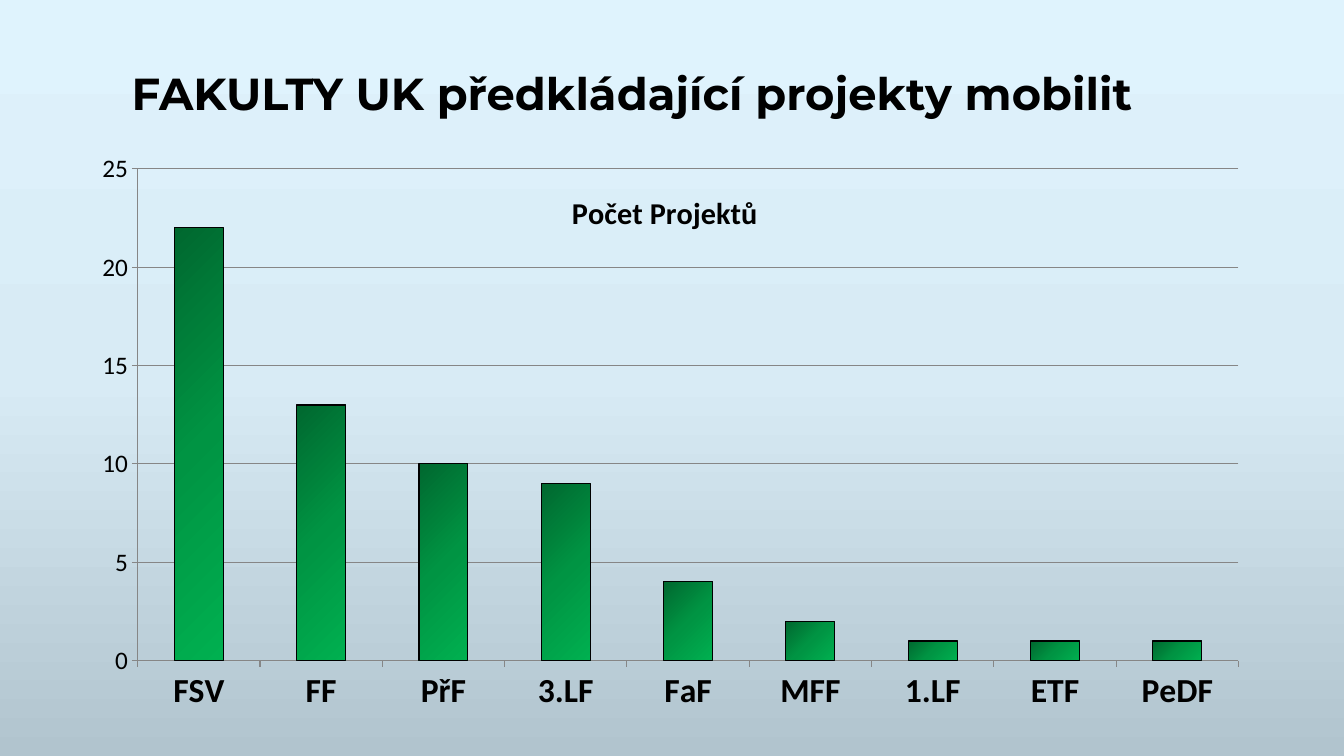
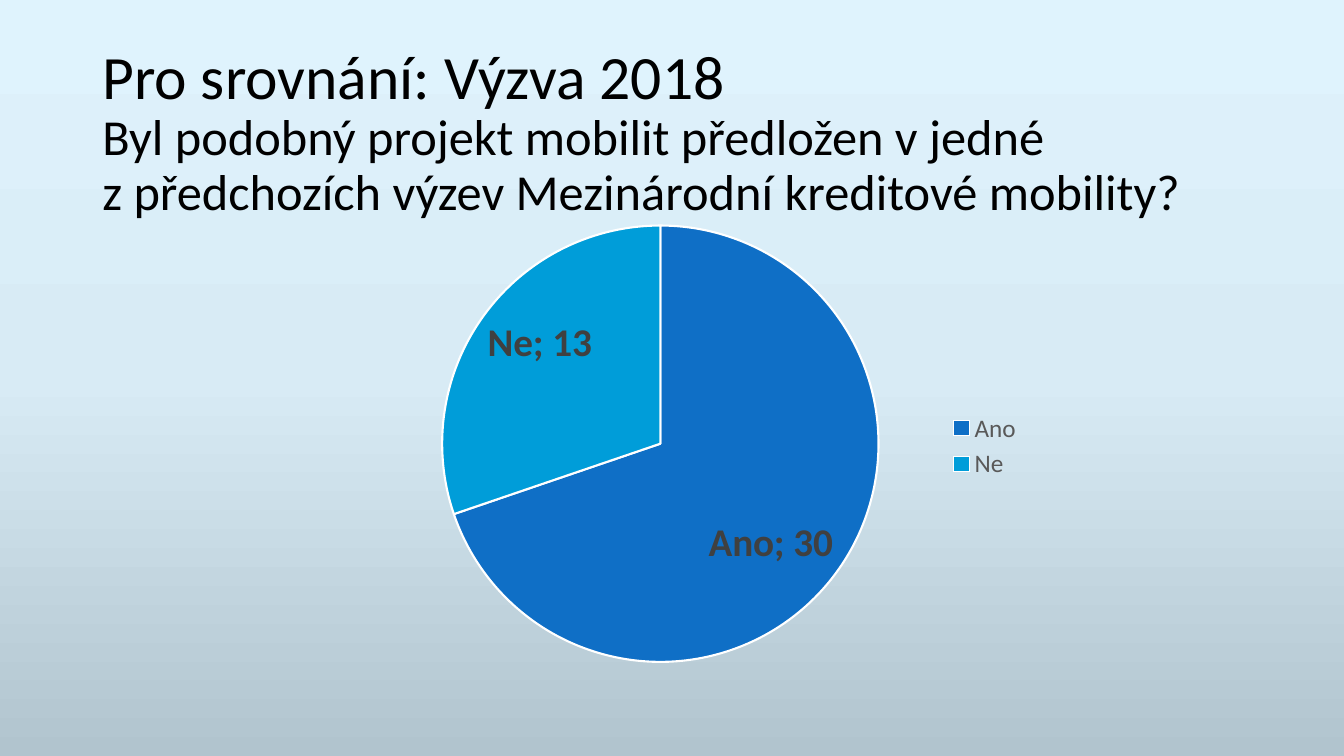
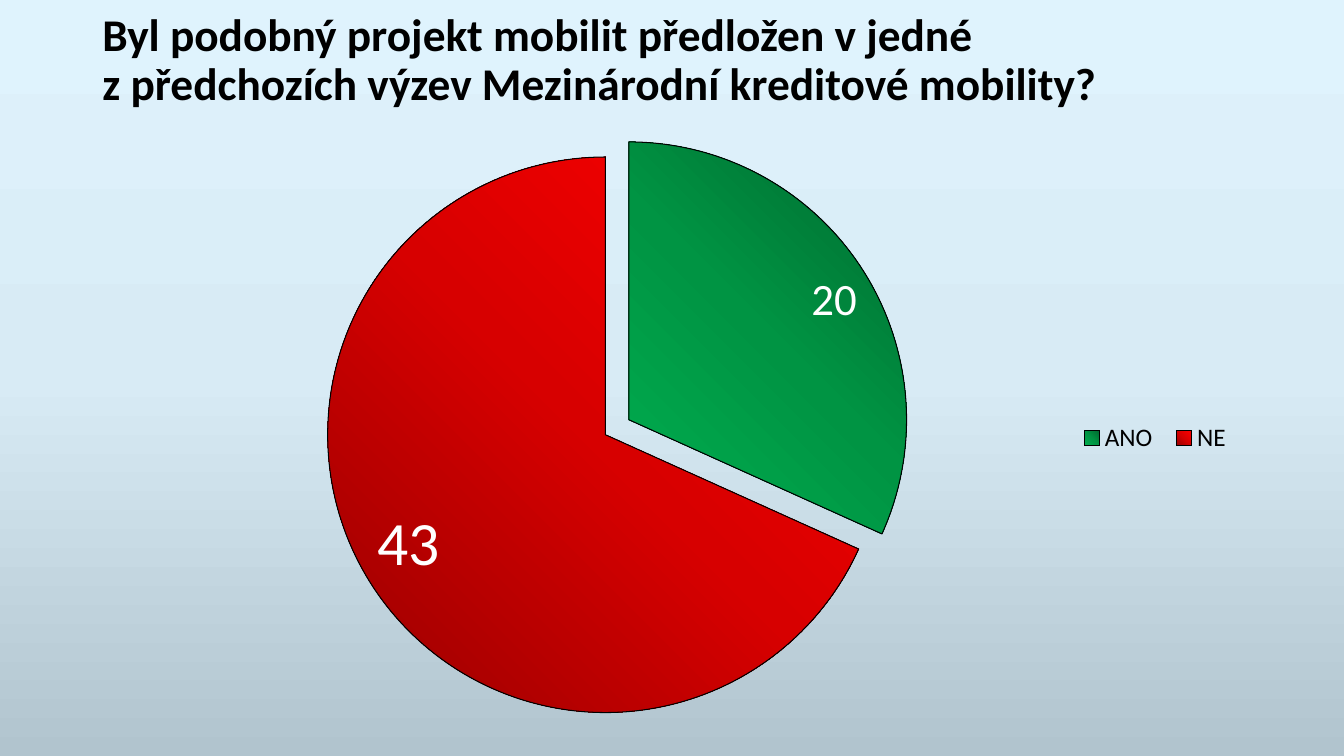
from copy import deepcopy
from lxml import etree
from pptx import Presentation
from pptx.chart.data import CategoryChartData
from pptx.dml.color import RGBColor
from pptx.enum.chart import XL_CHART_TYPE, XL_LABEL_POSITION, XL_LEGEND_POSITION, XL_TICK_MARK
from pptx.enum.text import MSO_ANCHOR
from pptx.oxml.ns import qn
from pptx.util import Emu, Pt

BAR, PIE = XL_CHART_TYPE.COLUMN_CLUSTERED, XL_CHART_TYPE.PIE
RIGHT = XL_LEGEND_POSITION.RIGHT
INNER = XL_LABEL_POSITION.INSIDE_END
OUT, NONE = XL_TICK_MARK.OUTSIDE, XL_TICK_MARK.NONE
MIDDLE = MSO_ANCHOR.MIDDLE


class Theme:
    sky = ("DFF3FD", "D8EBF5", "B1C4CE")
    green = ("00682F", "009443", "00B050")
    red = ("970000", "D70000", "FF0000")
    blue, cyan = "0F6FC6", "009DD9"
    black, white, dark, gray, rule = "000000", "FFFFFF", "404040", "595959", "868686"
    body, head = "Calibri", "Montserrat"
    tiny, small, base, mark, large, huge = 18, 21.6, 24, 28, 32, 44
    sub, ask = 36, 32.4


UNIT = Emu(76200)
COLS, ROWS = 160, 90


def shade(fill, tones, angle):
    fill.gradient()
    first = fill.gradient_stops[0]._gs
    first.addnext(deepcopy(first))
    for stop, tone, spot in zip(fill.gradient_stops, tones, (0, 0.5, 1)):
        stop.color.rgb = RGBColor.from_string(tone)
        stop.position = spot
    fill.gradient_angle = 360 - angle


def place(host, index, shares, inner=False):
    for old in host.findall(qn("c:layout")):
        host.remove(old)
    layout = etree.Element(qn("c:layout"))
    manual = etree.SubElement(layout, qn("c:manualLayout"))
    vals = {"layoutTarget": "inner"} if inner else {}
    vals |= {"xMode": "edge", "yMode": "edge"}
    vals |= dict(zip("xywh", shares))
    for key, val in vals.items():
        etree.SubElement(manual, qn("c:" + key)).set("val", str(val))
    host.insert(index, layout)


deck = Presentation()
deck.slide_width, deck.slide_height = COLS * UNIT, ROWS * UNIT
blank = deck.slide_layouts[6]

query = ("Byl podobný projekt mobilit předložen v jedné",
         "z předchozích výzev Mezinárodní kreditové mobility?")
pages = [
    dict(box=(14.5, 4.8, 133, 13.3), face=Theme.head, bold=True,
         lines=[("FAKULTY UK předkládající projekty mobilit", Theme.large)],
         kind=BAR, area=(9.5, 18.1, 138, 67.3), plot=(0.05, 0.03, 0.95, 0.87),
         name="Počet Projektů",
         cats=("FSV", "FF", "PřF", "3.LF", "FaF", "MFF", "1.LF", "ETF", "PeDF"),
         vals=(22, 13, 10, 9, 4, 2, 1, 1, 1)),
    dict(box=(11, 4.8, 138, 22.2), face=Theme.body, bold=False,
         lines=[("Pro srovnání: Výzva 2018", Theme.huge)] + [(part, Theme.sub) for part in query],
         kind=PIE, area=(11, 24, 138, 57.1), plot=(0.3, 0.05, 0.38, 0.91),
         name="Series 1", cats=("Ano", "Ne"), vals=(30, 13)),
    dict(box=(11, 0.8, 135.5, 13), face=Theme.body, bold=True,
         lines=[(part, Theme.ask) for part in query],
         kind=PIE, area=(5.2, 15.1, 147, 71.9), plot=(0.23, 0.05, 0.45, 0.92),
         name="Series 1", cats=("ANO", "NE"), vals=(20, 43)),
]

charts, looks = [], []
for page in pages:
    slide = deck.slides.add_slide(blank)
    shade(slide.background.fill, Theme.sky, 90)

    frame = slide.shapes.add_textbox(*[int(n * UNIT) for n in page["box"]]).text_frame
    frame.word_wrap, frame.vertical_anchor = True, MIDDLE
    para = frame.paragraphs[0]
    para.line_spacing = 0.9
    for row, (text, size) in enumerate(page["lines"]):
        if row:
            para.add_line_break()
        run = para.add_run()
        run.text = text
        looks.append((run.font, dict(name=page["face"], size=size, bold=page["bold"], tone=Theme.black)))

    data = CategoryChartData()
    data.categories = page["cats"]
    data.add_series(page["name"], page["vals"])
    area = [int(n * UNIT) for n in page["area"]]
    chart = slide.shapes.add_chart(page["kind"], *area, data).chart
    chart.has_title = chart.has_legend = False
    looks.append((chart.font, dict(name=Theme.body, size=Theme.tiny, tone=Theme.black)))
    place(chart._chartSpace.find(".//" + qn("c:plotArea")), 0, page["plot"], True)
    charts.append(chart)

bar, *pies = charts
bar.has_title = True
title = bar.chart_title
title.text_frame.text = pages[0]["name"]
run = title.text_frame.paragraphs[0].runs[0]
looks.append((run.font, dict(name=Theme.body, size=Theme.small, bold=True, tone=Theme.black)))
place(title._element, 1, (0.42, 0.06))
title._element.find(qn("c:overlay")).set("val", "1")

plot = bar.plots[0]
plot.gap_width, plot.vary_by_categories = 150, False
cat, val = bar.category_axis, bar.value_axis
val.minimum_scale, val.maximum_scale, val.major_unit = 0, 25, 5
val.has_major_gridlines = True
looks.append((cat.tick_labels.font, dict(name=Theme.body, size=Theme.base, bold=True, tone=Theme.black)))
for axis in (cat, val):
    axis.major_tick_mark, axis.minor_tick_mark = OUT, NONE
strokes = [(part.format.line, Theme.rule, 0.75) for part in (cat, val, val.major_gridlines)]
shape = plot.series[0].format
shade(shape.fill, Theme.green, 45)
strokes.append((shape.line, Theme.black, 0.75))

keys = [(0.73, 0.43, 0.08, 0.16), (0.83, 0.48, 0.14, 0.07)]
tags = [dict(name=Theme.body, size=Theme.mark, bold=True, tone=Theme.dark),
        dict(name=Theme.body, size=Theme.large, tone=Theme.white)]
inks = [(Theme.gray, Theme.white, 1.5), (Theme.black, Theme.black, 0.75)]
for pie, key, tag, (ink, edge, width) in zip(pies, keys, tags, inks):
    pie.has_legend = True
    legend = pie.legend
    legend.position, legend.include_in_layout = RIGHT, False
    place(legend._element, 1, key)
    looks.append((legend.font, dict(name=Theme.body, size=Theme.tiny, tone=ink)))
    pie.plots[0].vary_by_categories = True
    series = pie.plots[0].series[0]
    labels = series.data_labels
    labels.show_value, labels.position = True, INNER
    looks.append((labels.font, tag))
    strokes += [(series.points[i].format.line, edge, width) for i in range(2)]

past, now = [pie.plots[0].series[0] for pie in pies]
past.data_labels.show_category_name = True
gap = etree.Element(qn("c:separator"))
gap.text = "; "
past.data_labels._element.find(qn("c:showBubbleSize")).addnext(gap)
for i, tone in enumerate((Theme.blue, Theme.cyan)):
    fill = past.points[i].format.fill
    fill.solid()
    fill.fore_color.rgb = RGBColor.from_string(tone)
for i, (tones, angle) in enumerate(((Theme.green, 135), (Theme.red, 315))):
    shade(now.points[i].format.fill, tones, angle)
slice_xml = now._element.find(qn("c:dPt"))
burst = etree.Element(qn("c:explosion"))
burst.set("val", "10")
slice_xml.find(qn("c:spPr")).addprevious(burst)
label = now.points[1].data_label
looks.append((label.font, tags[1] | dict(size=Theme.huge)))
label.position = INNER

for line, tone, width in strokes:
    line.color.rgb = RGBColor.from_string(tone)
    line.width = Pt(width)
for font, fmt in looks:
    for key, val in fmt.items():
        if key == "tone":
            font.color.rgb = RGBColor.from_string(val)
        else:
            setattr(font, key, Pt(val) if key == "size" else val)

deck.save("out.pptx")
